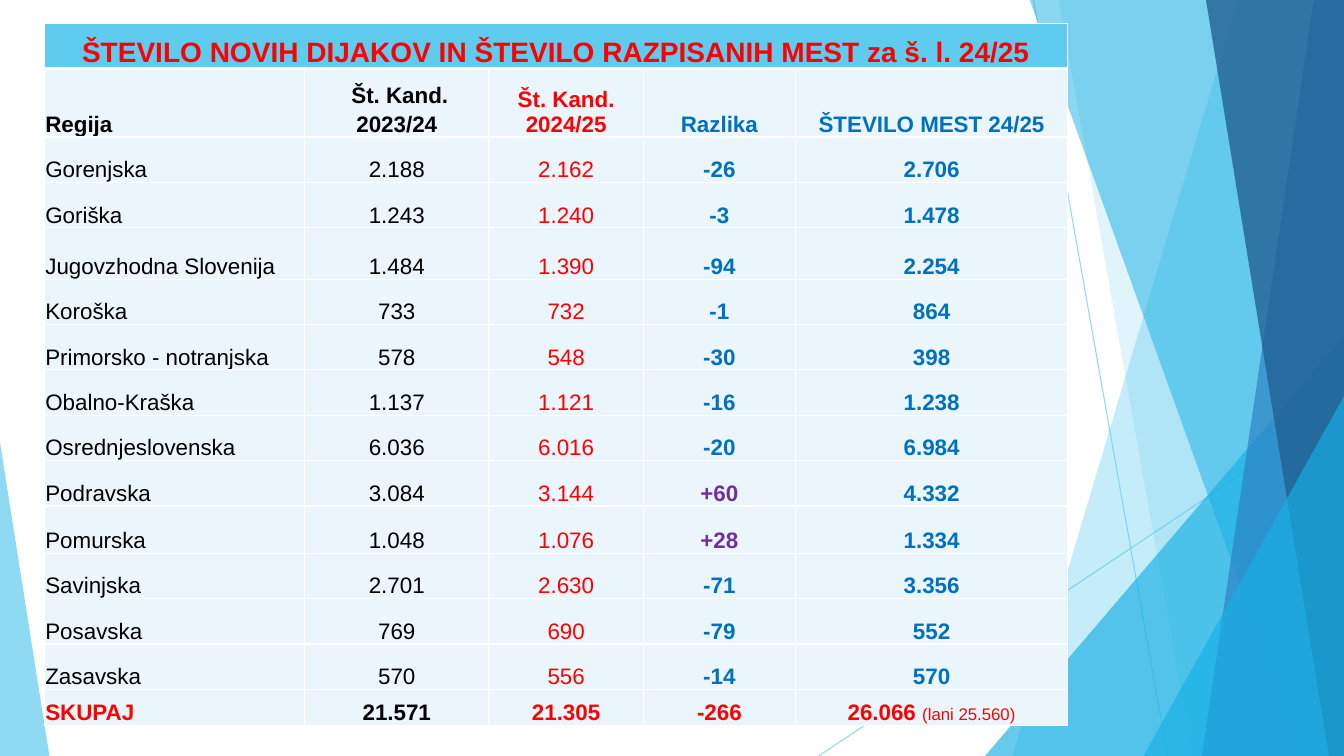
"""Builds a slide with a table of new students and available places by region."""
from lxml.etree import SubElement
from pptx import Presentation
from pptx.dml.color import RGBColor
from pptx.enum.shapes import MSO_CONNECTOR, MSO_SHAPE
from pptx.enum.text import MSO_ANCHOR, PP_ALIGN
from pptx.oxml import parse_xml
from pptx.oxml.ns import nsdecls, qn
from pptx.util import Inches, Pt

W, H = 13.33, 7.5
COLORS = {
    "sky": "5FCBEF", "cyan": "17B0E4", "blue": "2E83C3", "navy": "226292",
    "pale": "EAF6FC", "white": "FFFFFF", "black": "000000",
    "red": "FF0000", "accent": "0070C0", "purple": "7030A0",
}
TITLE = "ŠTEVILO NOVIH DIJAKOV IN ŠTEVILO RAZPISANIH MEST za š. l. 24/25"
HEADER = ("Regija", " Št. Kand. 2023/24", "Št. Kand. 2024/25", "Razlika", "ŠTEVILO MEST 24/25")
REGIONS = [
    ("Gorenjska", "2.188", "2.162", "-26", "2.706"),
    ("Goriška", "1.243", "1.240", "-3", "1.478"),
    ("Jugovzhodna Slovenija", "1.484", "1.390", "-94", "2.254"),
    ("Koroška", "733", "732", "-1", "864"),
    ("Primorsko - notranjska", "578", "548", "-30", "398"),
    ("Obalno-Kraška", "1.137", "1.121", "-16", "1.238"),
    ("Osrednjeslovenska", "6.036", "6.016", "-20", "6.984"),
    ("Podravska", "3.084", "3.144", "+60", "4.332"),
    ("Pomurska", "1.048", "1.076", "+28", "1.334"),
    ("Savinjska", "2.701", "2.630", "-71", "3.356"),
    ("Posavska", "769", "690", "-79", "552"),
    ("Zasavska", "570", "556", "-14", "570"),
]
TOTAL = ("SKUPAJ", "21.571", "21.305", "-266", "26.066 ")
LAST_YEAR = "(lani 25.560)"
COLUMN_COLORS = ("black", "black", "red", "accent", "accent")
TOTAL_COLORS = ("red", "black", "red", "red", "red")

COL_WIDTHS = (2.58, 1.83, 1.53, 1.51, 2.7)
ROW_HEIGHT = 0.45
SPECIAL_ROWS = {1: 0.68, 4: 0.51, 10: 0.47, 14: 0.36}

LINES = [(10.25, 0, 11.58, H), (W, 4.03, 8.12, H)]
FACETS = [
    ("band", 12.28, 10.04, "sky", 36),
    ("band", 10.5, 11.83, "sky", 20),
    ("triangle", 9.77, 3.56, 4.17, 1, "cyan", 66),
    ("band", 10.21, 12.91, "cyan", 50),
    ("band", 13.03, 11.92, "blue", 70),
    ("band", 11.96, 13.18, "navy", 80),
    ("triangle", 11.34, 1.99, 3.57, 1, "cyan", 66),
    ("triangle", 0, 0.49, 3.11, 0, "sky", 70),
]


def rgb(name):
    return RGBColor.from_string(COLORS[name])


def set_alpha(fill_parent, percent):
    color = fill_parent.find(".//" + qn("a:srgbClr"))
    SubElement(color, qn("a:alpha")).set("val", str(percent * 1000))


def add_line(s, x1, y1, x2, y2):
    line = s.shapes.add_connector(MSO_CONNECTOR.STRAIGHT, *map(Inches, (x1, y1, x2, y2)))
    line.line.color.rgb = rgb("sky")
    line.line.width = Pt(0.75)
    props = line._element.spPr
    set_alpha(props, 70)
    SubElement(props, qn("a:effectLst"))


def add_facet(s, kind, *args):
    *geometry, color, alpha = args
    if kind == "band":
        top, bottom = geometry
        points = [(Inches(x), Inches(y)) for x, y in
                  ((top, -0.01), (W, -0.01), (W, H), (bottom, H))]
        builder = s.shapes.build_freeform(*points[0])
        builder.add_line_segments(points[1:])
        sp = builder.convert_to_shape()
    else:
        left, width, height, apex = geometry
        sp = s.shapes.add_shape(MSO_SHAPE.ISOSCELES_TRIANGLE,
                                *map(Inches, (left, H - height, width, height)))
        sp.adjustments[0] = apex
    sp.shadow.inherit = False
    sp.line.fill.background()
    sp.fill.solid()
    sp.fill.fore_color.rgb = rgb(color)
    set_alpha(sp._element.spPr, alpha)


def add_run(p, text, size, color, bold):
    r = p.add_run()
    r.text = text
    r.font.name = "Arial"
    r.font.size = Pt(size)
    r.font.bold = bold
    r.font.color.rgb = rgb(color)


def fill_cell(cell, text, color, bold, size=16, fill="pale", align=PP_ALIGN.CENTER, bottom=1):
    cell.margin_left = cell.margin_right = cell.margin_top = Inches(0.01)
    cell.margin_bottom = 0
    cell.vertical_anchor = MSO_ANCHOR.BOTTOM
    cell.fill.solid()
    cell.fill.fore_color.rgb = rgb(fill)
    props = cell._tc.get_or_add_tcPr()
    for i, side in enumerate("LRTB"):
        width = Pt(bottom if side == "B" else 1)
        props.insert(i, parse_xml(
            f'<a:ln{side} {nsdecls("a")} w="{width}"><a:solidFill>'
            f'<a:srgbClr val="{COLORS["white"]}"/></a:solidFill></a:ln{side}>'))
    p = cell.text_frame.paragraphs[0]
    p.alignment = align
    if text:
        add_run(p, text, size, color, bold)
    return p


def add_region_table(s):
    rows = [HEADER, *REGIONS, TOTAL]
    heights = [SPECIAL_ROWS.get(i, ROW_HEIGHT) for i in range(len(rows) + 1)]
    box = (0.44, 0.23, sum(COL_WIDTHS), sum(heights))
    table = s.shapes.add_table(len(heights), len(COL_WIDTHS), *map(Inches, box)).table
    table.first_row = table.horz_banding = False
    for column, width in zip(table.columns, COL_WIDTHS):
        column.width = Inches(width)
    for row, height in zip(table.rows, heights):
        row.height = Inches(height)

    table.cell(0, 0).merge(table.cell(0, len(COL_WIDTHS) - 1))
    for c in range(len(COL_WIDTHS)):
        fill_cell(table.cell(0, c), "" if c else TITLE, "red", True, 20, "sky", bottom=3)

    for i, values in enumerate(rows, 1):
        emphasis = values in (HEADER, TOTAL)
        colors = TOTAL_COLORS if values is TOTAL else COLUMN_COLORS
        for c, (text, color) in enumerate(zip(values, colors)):
            color = "purple" if text.startswith("+") else color
            align = PP_ALIGN.CENTER if c else PP_ALIGN.LEFT
            p = fill_cell(table.cell(i, c), text, color, emphasis or c > 2, align=align)
            if values is HEADER and c == 1:
                p.line_spacing = 1.15
    add_run(p, LAST_YEAR, 12, "red", False)


def main():
    prs = Presentation()
    prs.slide_width, prs.slide_height = Inches(W), Inches(H)
    s = prs.slides.add_slide(prs.slide_layouts[6])
    for line in LINES:
        add_line(s, *line)
    for facet in FACETS:
        add_facet(s, *facet)
    add_region_table(s)
    prs.save("out.pptx")


if __name__ == "__main__":
    main()
